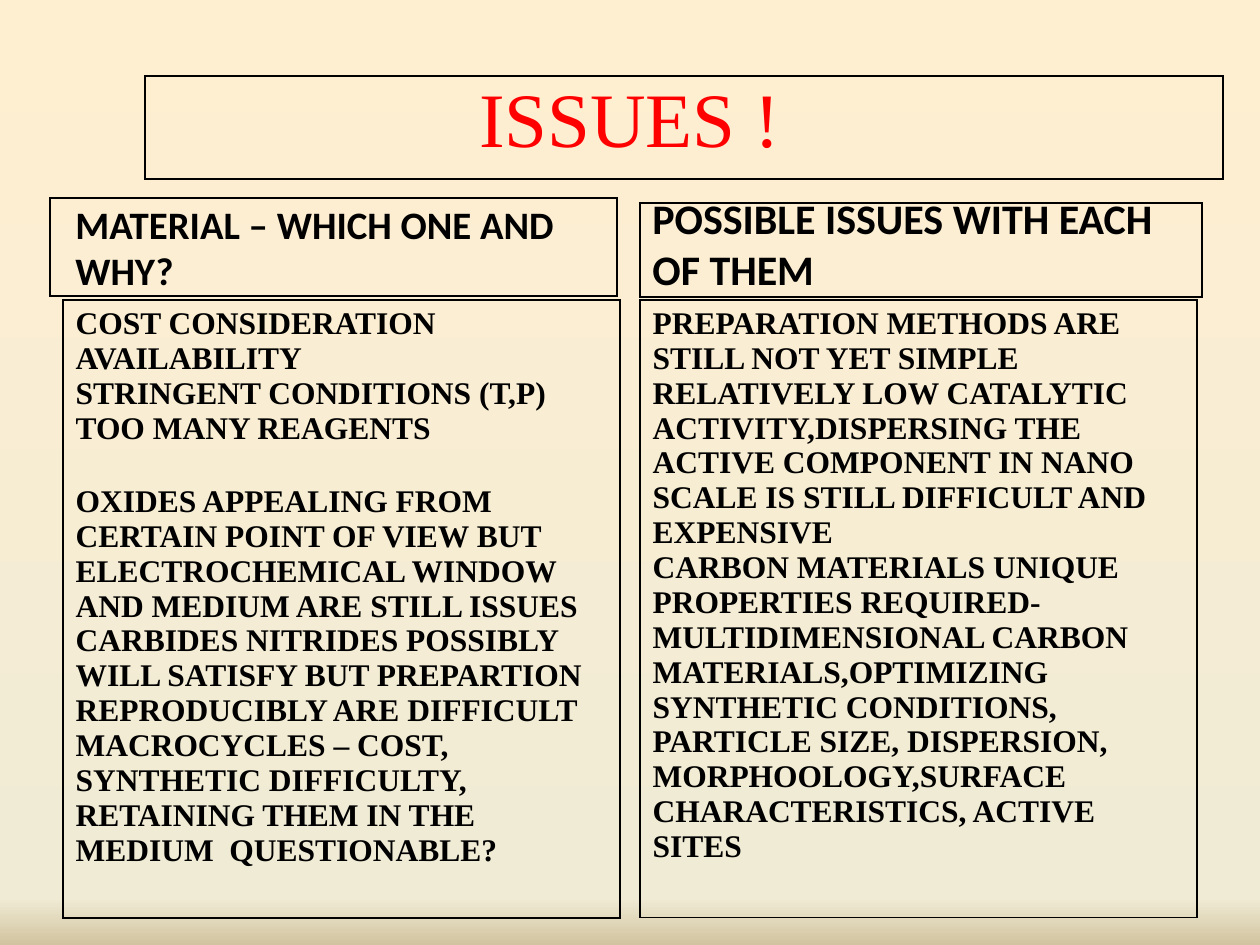
import copy

import lxml.etree
import pptx
import pptx.dml.color
import pptx.enum.text
import pptx.oxml.ns
import pptx.util

EMU_PER_PX = 914400 / 126
COLORS = {
    "title": "FF0000",
    "text": "000000",
    "border": "000000",
    "sky": "FFEFD1",
    "sand": "F0EBD5",
    "ground": "D1C39F",
}
SERIF = "Times New Roman"
SANS = "Calibri"
COLUMN_LEFTS = (63, 640)
COLUMN_WIDTH = 557
COLUMN_TOP = 300

MATERIALS = [
    "COST CONSIDERATION",
    "AVAILABILITY",
    "STRINGENT CONDITIONS (T,P)",
    "TOO MANY REAGENTS",
    "OXIDES APPEALING FROM CERTAIN POINT OF VIEW BUT ELECTROCHEMICAL WINDOW "
    "AND MEDIUM ARE STILL ISSUES",
    "CARBIDES NITRIDES POSSIBLY WILL SATISFY BUT PREPARTION REPRODUCIBLY ARE DIFFICULT",
    "MACROCYCLES – COST, SYNTHETIC DIFFICULTY, RETAINING THEM IN THE MEDIUM  QUESTIONABLE?",
]
ISSUES = [
    "PREPARATION METHODS ARE STILL NOT YET SIMPLE",
    "RELATIVELY LOW CATALYTIC ACTIVITY,DISPERSING THE ACTIVE COMPONENT IN NANO "
    "SCALE IS STILL DIFFICULT AND EXPENSIVE",
    "CARBON MATERIALS UNIQUE PROPERTIES REQUIRED- MULTIDIMENSIONAL CARBON "
    "MATERIALS,OPTIMIZING SYNTHETIC CONDITIONS, PARTICLE SIZE, DISPERSION, "
    "MORPHOOLOGY,SURFACE CHARACTERISTICS, ACTIVE SITES",
]


def px(length):
    return pptx.util.Emu(round(length * EMU_PER_PX))


def rgb(name):
    return pptx.dml.color.RGBColor.from_string(COLORS[name])


def set_font(paragraph, name, size, color="text", bold=True):
    font = paragraph.font
    font.name = name
    font.size = pptx.util.Pt(size)
    font.bold = bold
    font.color.rgb = rgb(color)


def paint_background(slide):
    fill = slide.background.fill
    fill.gradient()
    fill.gradient_angle = 270
    first_stop = fill.gradient_stops[0]._gs
    first_stop.addnext(copy.deepcopy(first_stop))
    stops = ((0, "sky"), (0.95, "sand"), (1, "ground"))
    for stop, (position, color) in zip(fill.gradient_stops, stops):
        stop.position = position
        stop.color.rgb = rgb(color)


def add_title(slide, text):
    title = slide.shapes.title
    title.left, title.top, title.width, title.height = map(px, (63, 38, 1134, 158))
    frame = title.text_frame
    frame.text = text
    frame.auto_size = pptx.enum.text.MSO_AUTO_SIZE.NONE
    frame.vertical_anchor = pptx.enum.text.MSO_ANCHOR.MIDDLE
    paragraph = frame.paragraphs[0]
    paragraph.alignment = pptx.enum.text.PP_ALIGN.CENTER
    set_font(paragraph, SERIF, 44, "title", False)


def add_heading(slide, text, left, height, size):
    box = slide.shapes.add_textbox(
        px(left), px(COLUMN_TOP - height), px(COLUMN_WIDTH), px(height)
    )
    frame = box.text_frame
    frame.word_wrap = True
    frame.vertical_anchor = pptx.enum.text.MSO_ANCHOR.BOTTOM
    frame.text = text
    set_font(frame.paragraphs[0], SANS, size)


def add_border(cell):
    properties = cell._tc.get_or_add_tcPr()
    for side in ("lnL", "lnR", "lnT", "lnB"):
        line = lxml.etree.SubElement(
            properties, pptx.oxml.ns.qn(f"a:{side}"), w=str(pptx.util.Pt(1))
        )
        fill = lxml.etree.SubElement(line, pptx.oxml.ns.qn("a:solidFill"))
        lxml.etree.SubElement(fill, pptx.oxml.ns.qn("a:srgbClr"), val=COLORS["border"])


def add_framed_cell(slide, left, top, width, height):
    frame = slide.shapes.add_table(1, 1, px(left), px(top), px(width), px(height))
    table = frame.table
    table.first_row = False
    table.horz_banding = False
    cell = table.cell(0, 0)
    add_border(cell)
    cell.fill.background()
    return cell


def add_list(slide, lines, left, height):
    cell = add_framed_cell(slide, left, COLUMN_TOP, COLUMN_WIDTH, height)
    cell.text = "\n".join(lines)
    for paragraph in cell.text_frame.paragraphs:
        set_font(paragraph, SERIF, 18)
    return cell.text_frame.paragraphs


def main():
    presentation = pptx.Presentation()
    presentation.slide_width = px(1260)
    presentation.slide_height = px(945)
    slide = presentation.slides.add_slide(presentation.slide_layouts[5])
    paint_background(slide)
    add_title(slide, "ISSUES !")

    left, right = COLUMN_LEFTS
    add_heading(slide, "MATERIAL – WHICH ONE AND WHY?", left, 88, 22.2)
    materials = add_list(slide, MATERIALS, left, 574)
    materials[4].space_before = pptx.util.Pt(22)
    add_heading(slide, "POSSIBLE ISSUES WITH EACH OF THEM", right, 121, 24)
    add_list(slide, ISSUES, right, 608)

    add_framed_cell(slide, right, 203, 562, 94)
    add_framed_cell(slide, 50, 198, 567, 98)
    add_framed_cell(slide, 145, 76, 1078, 103)
    presentation.save("out.pptx")


if __name__ == "__main__":
    main()
